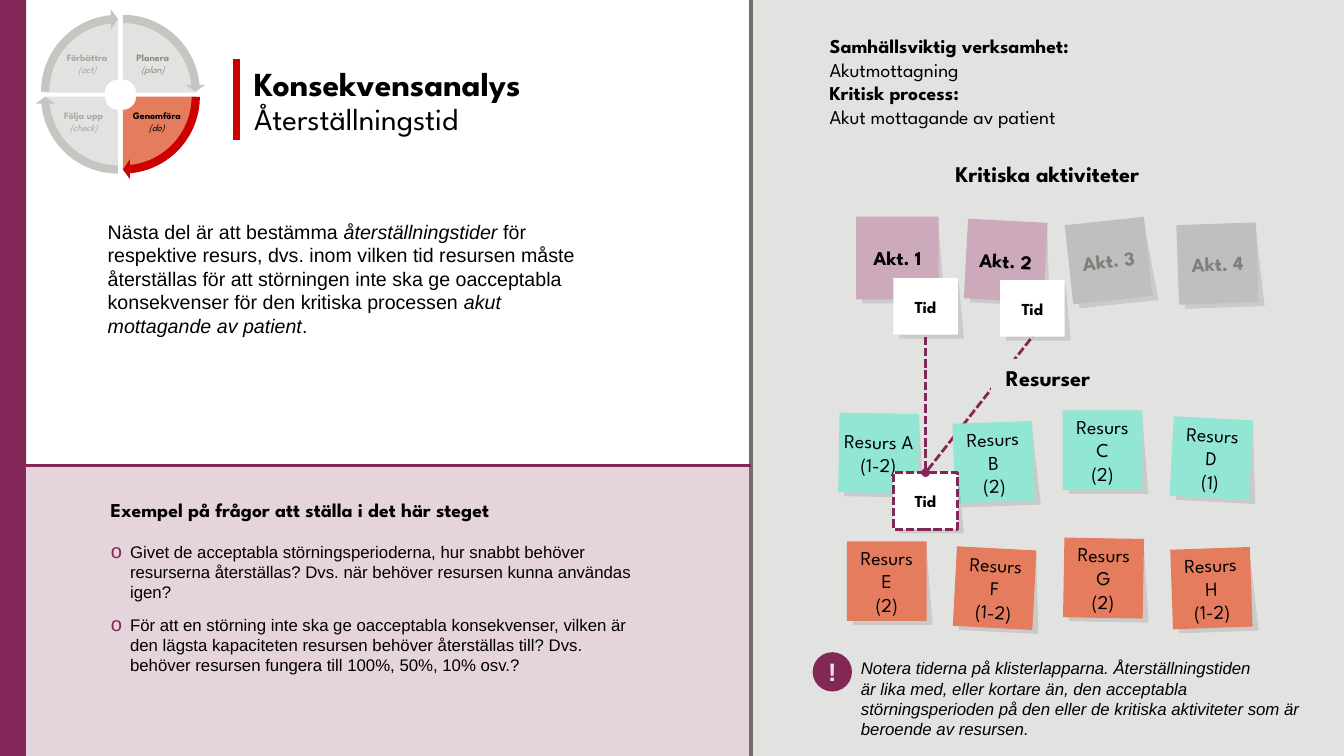
import math
import lxml.etree
import pptx
import pptx.dml.color
import pptx.enum.dml
import pptx.enum.shapes
import pptx.enum.text
import pptx.oxml.ns
import pptx.util

PX = 9144
SPARTAN, ARIAL = "League Spartan", "Arial"
PLUM, RED, CORAL, MINT, PINK = "822757", "CC0000", "E67C5E", "92E6D4", "CDA9BC"
BLACK, WHITE, PANEL, GREY, DIM = "000000", "FFFFFF", "E2E2E1", "BFBFBF", "807F79"
BOLD, PLAIN = {"bold": True}, {"bold": False}
ITALIC, UPRIGHT = {"italic": True}, {"italic": False}

TITLE = [[("Konsekvensanalys\n", BOLD), ("Återställningstid", {"size": 22, "bold": False})]]
INTRO = [[
    ("Nästa del är att bestämma ", {}), ("återställningstider", ITALIC),
    (" för \nrespektive resurs, dvs. inom vilken tid resursen måste återställas för att "
     "störningen inte ska ge oacceptabla konsekvenser för den kritiska processen ", UPRIGHT),
    ("akut mottagande av patient", ITALIC), (".", UPRIGHT)]]
QUESTIONS_HEAD = "Exempel på frågor att ställa i det här steget"
QUESTIONS = [
    "Givet de acceptabla störningsperioderna, hur snabbt behöver resurserna återställas? "
    "Dvs. när behöver resursen kunna användas igen?",
    "För att en störning inte ska ge oacceptabla konsekvenser, vilken är den lägsta kapaciteten "
    "resursen behöver återställas till? Dvs. behöver resursen fungera till 100%, 50%, 10% osv.?",
]
CASE = [[
    ("Samhällsviktig verksamhet: \n", BOLD), ("Akutmottagning\n", PLAIN),
    ("Kritisk process: \n", BOLD), ("Akut mottagande av patient", PLAIN)]]
REMINDER = (
    "Notera tiderna på klisterlapparna. Återställningstiden \när lika med, eller kortare än, "
    "den acceptabla störningsperioden på den eller de kritiska aktiviteter som är beroende av resursen.")
ACTIVITIES = [
    ("Akt. 1", 849, 215, 82, 0, PINK, BLACK),
    ("Akt. 2", 958, 219, 79, 3, PINK, BLACK),
    ("Akt. 3", 1060, 219, 79, -6.1, GREY, DIM),
    ("Akt. 4", 1168, 222, 79, -2, GREY, DIM),
]
RESOURCES = [
    ("Resurs A", "(1-2)", 832, 410, 1, MINT, 4),
    ("Resurs B", "(2)", 946, 419, -2, MINT, 10),
    ("Resurs C", "(2)", 1054, 407, 0, MINT, 10),
    ("Resurs D", "(1)", 1162, 415, 3, MINT, 10),
    ("Resurs E", "(2)", 840, 537, 0, CORAL, 10),
    ("Resurs F", "(1-2)", 947, 544, 3, CORAL, 10),
    ("Resurs G", "(2)", 1055, 534, 1, CORAL, 10),
    ("Resurs H", "(1-2)", 1162, 544, -2, CORAL, 10),
]
TIMES = [(886, 276, None), (992, 278, None), (886, 469, PLUM)]
QUADRANTS = [(117, 92, -1, -1, PANEL), (117, 96, -1, 1, PANEL),
             (122, 92, 1, -1, PANEL), (122, 96, 1, 1, CORAL)]
ARROWS = [(40, 9, 162, "C5C5C2"), (40, 14, 0, RED), (35, 14, 54, "C5C5C2"), (35, 9, 108, "C5C5C2")]
PHASES = [
    ("Förbättra", "(act)", 55, 48, 63, "A9A8A4"),
    ("Följa upp", "(check)", 51, 105, 64, "A9A8A4"),
    ("Genomföra", "(do)", 118, 105, 75, BLACK),
    ("Planera", "(plan)", 115, 48, 73, "8C8B85"),
]

SHAPE = pptx.enum.shapes.MSO_SHAPE
CENTER = pptx.enum.text.PP_ALIGN.CENTER
LEFT = pptx.enum.text.PP_ALIGN.LEFT
qn = pptx.oxml.ns.qn

prs = pptx.Presentation()
prs.slide_width, prs.slide_height = 1333 * PX, 750 * PX
s = prs.slides.add_slide(prs.slide_layouts[1])


def rgb(color):
    return pptx.dml.color.RGBColor.from_string(color)


def child(parent, tag, **attrs):
    return lxml.etree.SubElement(parent, qn(tag), **attrs)


def set_text(sp, paragraphs, size, font=SPARTAN, color=BLACK, align=LEFT, after=0, spacing=None,
             inset=None, middle=False, grow=True, wrap=True, bullet=False, **base):
    tf = sp.text_frame
    anchor, auto = pptx.enum.text.MSO_ANCHOR, pptx.enum.text.MSO_AUTO_SIZE
    frame = {"word_wrap": wrap, "vertical_anchor": anchor.MIDDLE if middle else anchor.TOP,
             "auto_size": auto.SHAPE_TO_FIT_TEXT if grow else auto.NONE}
    for side in ("left", "top", "right", "bottom"):
        if inset is not None:
            frame["margin_" + side] = inset * PX
    for key, value in frame.items():
        setattr(tf, key, value)
    for i, runs in enumerate(paragraphs):
        p = tf.add_paragraph() if i else tf.paragraphs[0]
        if bullet:
            pPr = p._p.get_or_add_pPr()
            pPr.set("marL", str(19 * PX))
            pPr.set("indent", str(-19 * PX))
            child(child(pPr, "a:buClr"), "a:srgbClr", val=PLUM)
            child(pPr, "a:buSzPct", val="120000")
            child(pPr, "a:buFont", typeface=ARIAL)
            child(pPr, "a:buChar", char="o")
        layout = {"alignment": align, "space_before": pptx.util.Pt(0),
                  "space_after": pptx.util.Pt(after), "line_spacing": spacing}
        for key, value in layout.items():
            setattr(p, key, value)
        for text, changes in [(runs, {})] if isinstance(runs, str) else runs:
            form = {"name": font, "size": size, **base, **changes}
            form["size"] = pptx.util.Pt(form["size"])
            for j, line in enumerate(text.split("\n")):
                if j:
                    p.add_line_break()
                    child(p._p[-1], "a:rPr", sz=str(form["size"].centipoints))
                if line:
                    r = p.add_run()
                    r.text = line
                    r.font.color.rgb = rgb(color)
                    for key, value in form.items():
                        setattr(r.font, key, value)


def place(sp, *box):
    for key, value in zip(("left", "top", "width", "height"), box):
        setattr(sp, key, value * PX)


def add_text(box, paragraphs, size, **form):
    sp = s.shapes.add_textbox(*(v * PX for v in box))
    set_text(sp, paragraphs, size, **form)


def paint(sp, fill):
    sp.shadow.inherit = False
    sp.fill.solid()
    sp.fill.fore_color.rgb = rgb(fill)
    sp.line.fill.background()
    return sp


def add_shape(kind, box, fill):
    return paint(s.shapes.add_shape(kind, *(v * PX for v in box)), fill)


def add_outline(points, fill):
    pts = [(round(x * PX), round(y * PX)) for x, y in points]
    builder = s.shapes.build_freeform(*pts[0], scale=1.0)
    builder.add_line_segments(pts[1:], close=True)
    return paint(builder.convert_to_shape(), fill)


def style_line(line, color, width, dashed):
    line.color.rgb = rgb(color)
    line.width = pptx.util.Pt(width)
    if dashed:
        line.dash_style = pptx.enum.dml.MSO_LINE.SQUARE_DOT


def add_line(x1, y1, x2, y2, color, width, dotted=False):
    c = s.shapes.add_connector(pptx.enum.shapes.MSO_CONNECTOR.STRAIGHT, *(v * PX for v in (x1, y1, x2, y2)))
    style_line(c.line, color, width, dotted)
    if dotted:
        child(c.line._get_or_add_ln(), "a:headEnd", type="oval")
    child(c._element.spPr, "a:effectLst")


def add_note(x, y, w, h, turn, fill, paragraphs, size, **form):
    sx, sy = x + 6, y + 4
    shade = add_outline([(sx, sy), (sx + 0.92 * w, sy), (sx + w, sy + h), (sx, sy + h)], BLACK)
    child(shade._element.spPr.find(qn("a:solidFill"))[0], "a:alpha", val="10000")
    note = add_shape(SHAPE.RECTANGLE, (x, y, w, h), fill)
    shade.rotation = note.rotation = turn
    set_text(note, paragraphs, size, align=CENTER, middle=True, grow=False, **form)
    return note


def arc(cx, cy, sx, sy, radius):
    angles = [math.radians(a) for a in range(0, 91, 3)]
    return [(cx + sx * radius * math.cos(a), cy + sy * radius * math.sin(a)) for a in angles]


add_shape(SHAPE.RECTANGLE, (0, 0, 26, 750), PLUM)
add_shape(SHAPE.RECTANGLE, (745, 0, 588, 750), PANEL)
add_shape(SHAPE.RECTANGLE, (26, 463, 720, 287), "E6D4DD")
add_line(235, 59, 235, 139, RED, 5)
add_line(745, 0, 745, 750, "6F6E67", 2.5)
add_line(26, 462, 745, 462, PLUM, 2.5)

title, body = s.placeholders
place(title, 242, 62, 423, 83)
set_text(title, TITLE, 24, spacing=0.9)
place(body, 100, 532, 548, 144)
set_text(body, QUESTIONS, 12, font=ARIAL, after=9, bullet=True)
for sp in (title, body):
    s.shapes._spTree.append(sp._element)

add_text((97, 213, 504, 128), INTRO, 14, font=ARIAL, after=12)
add_text((100, 489, 430, 34), [QUESTIONS_HEAD], 14, wrap=False, bold=True)
add_text((813, 29, 397, 104), CASE, 14, after=12)
add_text((819, 154, 440, 37), ["Kritiska aktiviteter"], 16, align=CENTER, after=12, bold=True)
add_text((844, 648, 472, 91), [REMINDER], 12, font=ARIAL, after=12, italic=True)
mark = add_shape(SHAPE.OVAL, (806, 647, 39, 39), PLUM)
set_text(mark, ["!"], 18, font=ARIAL, color="E7E6E6", align=CENTER, inset=0, middle=True, grow=False, bold=True)

add_line(918, 469, 1024, 334, PLUM, 2, dotted=True)
label = add_shape(SHAPE.RECTANGLE, (983, 356, 113, 37), PANEL)
set_text(label, ["Resurser"], 16, align=CENTER, after=12, bold=True)
for name, x, y, side, turn, fill, color in ACTIVITIES:
    add_note(x, y, side, side, turn, fill, [name], 14, color=color, bold=True)
for name, count, x, y, turn, fill, inset in RESOURCES:
    add_note(x, y, 79, 79, turn, fill, [name, count], 14, inset=inset)
for x, y, border in TIMES:
    tid = add_note(x, y, 64, 56, 0, WHITE, ["Tid"], 12, inset=0, bold=True)
    if border:
        style_line(tid.line, border, 2, True)
add_line(918, 469, 918, 332, PLUM, 2, dotted=True)

for cx, cy, sx, sy, fill in QUADRANTS:
    add_outline(arc(cx, cy, sx, sy, 73) + arc(cx, cy, sx, sy, 13)[::-1], fill)
for x, y, start, fill in ARROWS:
    arrow = add_shape(SHAPE.CIRCULAR_ARROW, (x, y, 164, 164), fill)
    for i, value in enumerate((0.05, 3.28, start + 50.73, start, 0.06)):
        arrow.adjustments[i] = value
for name, step, x, y, w, color in PHASES:
    add_text((x, y, w, 33), [[(name, BOLD)], [(step, ITALIC)]], 7, color=color,
             align=CENTER, after=1, spacing=0.9, wrap=False)

prs.save("out.pptx")
